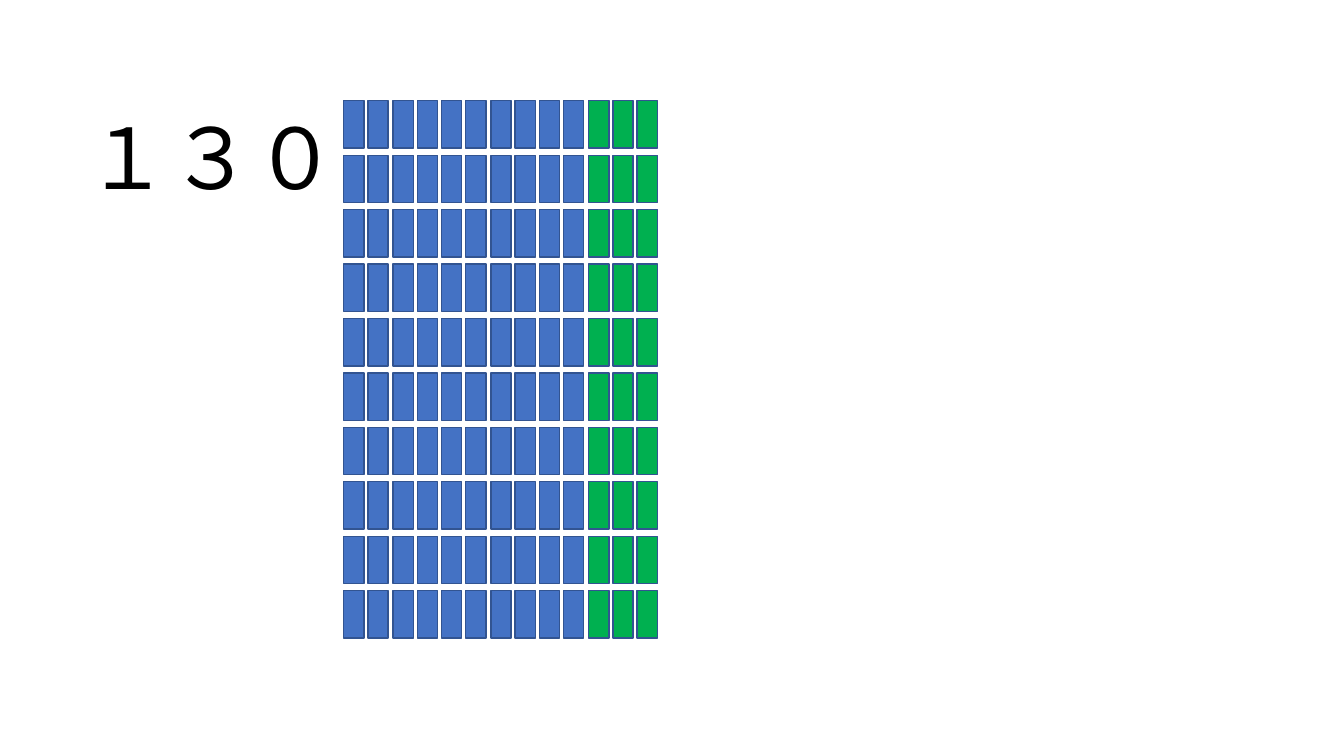
from lxml.etree import SubElement
from pptx import Presentation
from pptx.dml.color import RGBColor
from pptx.enum.shapes import MSO_SHAPE
from pptx.enum.text import MSO_AUTO_SIZE
from pptx.oxml.ns import qn
from pptx.util import Emu, Pt

PX = 9144
FONT = "Noto Sans CJK JP"
COLORS = {"text": "000000", "hundred": "4472C4", "ten": "00B050", "outline": "325491"}
ROWS = 10
LEFT, TOP = 341, 100
BAR_W, BAR_H = 20, 47
ROW_STEP = 54
FOUR_COLS = 97


def px(*lengths):
    """Turn px lengths into EMU."""
    return [Emu(n * PX) for n in lengths]


def rgb(name):
    """Look up a named colour."""
    return RGBColor.from_string(COLORS[name])


def set_all(obj, values):
    """Set each attribute in a dict of format values."""
    for key, value in values.items():
        setattr(obj, key, value)


def add_number(s, text, box):
    """Add the large number label."""
    tf = s.shapes.add_textbox(*px(*box)).text_frame
    set_all(tf, {"word_wrap": True, "auto_size": MSO_AUTO_SIZE.SHAPE_TO_FIT_TEXT})
    r = tf.paragraphs[0].add_run()
    r.text = text
    set_all(r.font, {"name": FONT, "size": Pt(60)})
    r.font.color.rgb = rgb("text")
    SubElement(r.font._element, qn("a:ea"), typeface=FONT)


def add_bar(shapes, col, row, color):
    """Add one bar at its place in the grid."""
    x = LEFT + (FOUR_COLS * col + 2) // 4
    y = TOP + ROW_STEP * row
    sp = shapes.add_shape(MSO_SHAPE.RECTANGLE, *px(x, y, BAR_W, BAR_H))
    sp.shadow.inherit = False
    sp.fill.solid()
    sp.fill.fore_color.rgb = rgb(color)
    sp.line.color.rgb = rgb("outline")
    sp.line.width = Pt(1)


def add_block(s, cols, color):
    """Add a group of full columns of bars."""
    group = s.shapes.add_group_shape()
    for col in cols:
        for row in range(ROWS):
            add_bar(group.shapes, col, row, color)


def main():
    """Build the slide showing 130 as one hundred and three tens."""
    prs = Presentation()
    prs.slide_width, prs.slide_height = px(1333, 750)
    s = prs.slides.add_slide(prs.slide_layouts[6])
    add_number(s, "１３０", (75, 100, 287, 111))
    add_block(s, range(10), "hundred")
    for col in range(10, 13):
        add_block(s, [col], "ten")
    prs.save("out.pptx")


if __name__ == "__main__":
    main()
